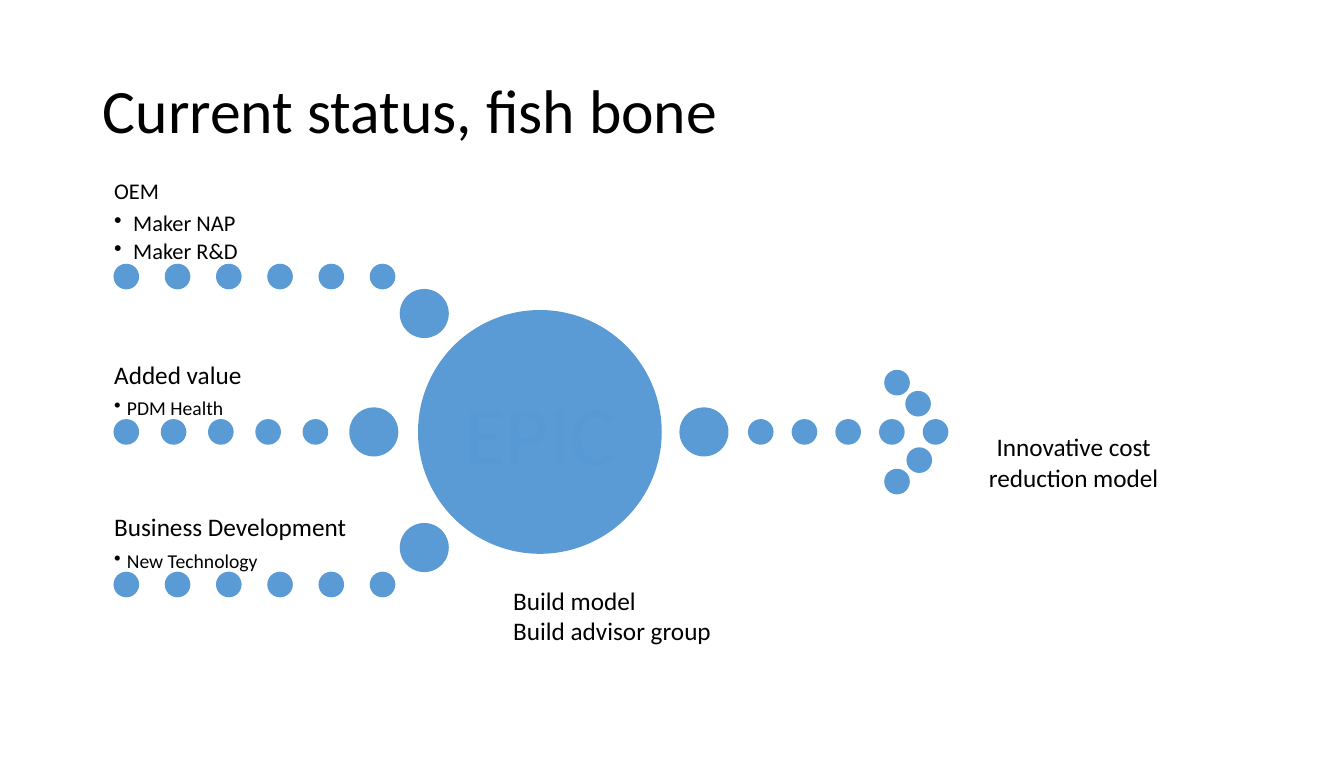
from dataclasses import dataclass

from lxml.etree import SubElement
from pptx import Presentation
from pptx.dml.color import RGBColor
from pptx.enum.shapes import MSO_SHAPE as Shape
from pptx.enum.text import MSO_ANCHOR as Anchor, PP_ALIGN as Align
from pptx.oxml.ns import qn
from pptx.util import Cm, Pt


@dataclass(frozen=True)
class Theme:
    font: str = "Calibri"
    ink: str = "000000"
    blue: str = "5B9BD5"
    faint: str = "5799D4"
    title: int = 44
    hub: int = 60
    body: int = 18
    medium: int = 16
    small: int = 14
    dot: float = 0.61
    node: float = 1.2
    core: float = 6.1


class FishBone:
    def __init__(self, prs, theme):
        self.theme = theme
        self.s = prs.slides.add_slide(prs.slide_layouts[6])

    def style(self, p, size, color=None):
        for r in p.runs:
            r.font.name = self.theme.font
            r.font.size = Pt(size)
            r.font.color.rgb = RGBColor.from_string(color or self.theme.ink)

    def text(self, x, y, w, h, text, size, align=Align.LEFT, anchor=Anchor.TOP,
             wrap=True, spacing=1.0):
        sp = self.s.shapes.add_textbox(Cm(x), Cm(y), Cm(w), Cm(h))
        tf = sp.text_frame
        tf.text = text
        tf.word_wrap = wrap
        tf.vertical_anchor = anchor
        for p in tf.paragraphs:
            p.alignment = align
            p.line_spacing = spacing
            self.style(p, size)
        return tf

    def circle(self, x, y, size):
        sp = self.s.shapes.add_shape(
            Shape.OVAL, Cm(x - size / 2), Cm(y - size / 2), Cm(size), Cm(size))
        sp.shadow.inherit = False
        sp.fill.solid()
        sp.fill.fore_color.rgb = RGBColor.from_string(self.theme.blue)
        sp.line.color.rgb = RGBColor.from_string(self.theme.blue)
        sp.line.width = Pt(1)
        return sp

    def dots(self, x, y, step, count):
        for i in range(count):
            self.circle(x + i * step, y, self.theme.dot)

    def hub(self, x, y, text):
        tf = self.circle(x, y, self.theme.core).text_frame
        tf.text = text
        tf.vertical_anchor = Anchor.MIDDLE
        p = tf.paragraphs[0]
        p.alignment = Align.CENTER
        self.style(p, self.theme.hub, self.theme.faint)

    def bullet(self, p, indent):
        pPr = p._p.get_or_add_pPr()
        pPr.set("marL", str(Cm(indent)))
        pPr.set("indent", str(-Cm(indent)))
        SubElement(pPr, qn("a:buChar")).set("char", "•")

    def label(self, x, bottom, w, head, items, head_size, item_size, indent):
        h = 1.55
        tf = self.text(x, bottom - h, w, h, "\n".join([head, *items]), head_size,
                       anchor=Anchor.BOTTOM, spacing=0.9)
        tf.margin_left = tf.margin_right = tf.margin_top = tf.margin_bottom = 0
        first, *rest = tf.paragraphs
        first.space_after = Pt(head_size * 0.35)
        for p in rest:
            p.space_after = Pt(item_size * 0.15)
            self.style(p, item_size)
            self.bullet(p, indent)


def main():
    prs = Presentation()
    prs.slide_width, prs.slide_height = Cm(33.83), Cm(19.05)
    t = Theme()
    fish = FishBone(prs, t)
    left, axis = 3.18, 10.87

    fish.text(2.34, 1.02, 29.18, 3.68, "Current status, fish bone", t.title,
              anchor=Anchor.MIDDLE, spacing=0.9)
    fish.text(23.85, 10.74, 6.35, 1.8, "Innovative cost reduction model", t.body,
              align=Align.CENTER)
    fish.text(12.67, 14.6, 6, 1.8, "Build model\nBuild advisor group", t.body,
              wrap=False)

    fish.circle(17.72, axis, t.node)
    fish.dots(19.15, axis, 1.1, 5)
    for x, y in [(22.58, 9.63), (23.11, 10.16), (23.14, 11.58), (22.58, 12.12)]:
        fish.circle(x, y, t.dot)
    fish.hub(13.59, axis, "EPIC")

    branches = [
        (6.96, 1.29, 6, (10.68, 7.89), 7.06, "OEM", ["Maker NAP", "Maker R&D"],
         t.medium, t.medium, 0.48),
        (axis, 1.19, 5, (9.41, axis), 5.33, "Added value", ["PDM Health"],
         t.body, t.small, 0.32),
        (14.71, 1.29, 6, (10.68, 13.78), 7.06, "Business Development",
         ["New Technology"], t.body, t.small, 0.32),
    ]
    for y, step, count, node, w, head, items, head_size, item_size, indent in branches:
        fish.circle(*node, t.node)
        fish.dots(left, y, step, count)
        fish.label(left - t.dot / 2, y - t.dot / 2, w, head, items,
                   head_size, item_size, indent)

    prs.save("out.pptx")


if __name__ == "__main__":
    main()
